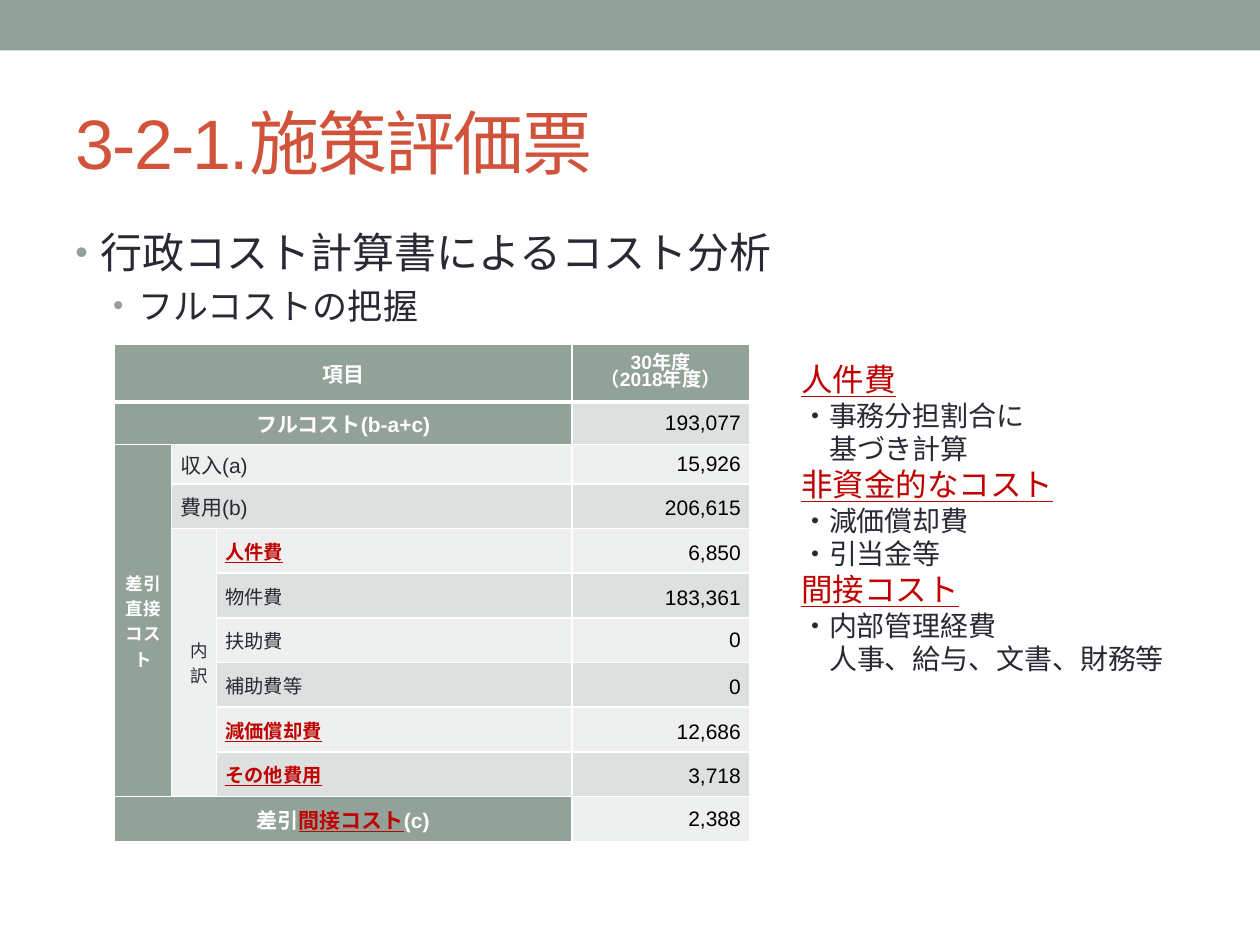
import pptx
import pptx.dml.color
import pptx.enum.shapes
import pptx.enum.text
import pptx.oxml.ns
import pptx.util
from dataclasses import dataclass
from lxml import etree

ALIGN = pptx.enum.text.PP_ALIGN
MIDDLE = pptx.enum.text.MSO_ANCHOR.MIDDLE
qn = pptx.oxml.ns.qn


@dataclass(frozen=True)
class Theme:
    sage: str = "93A299"
    band_dark: str = "DCE0DE"
    band_light: str = "EEF0EF"
    rust: str = "D2533C"
    ink: str = "292934"
    red: str = "C00000"
    black: str = "000000"
    white: str = "FFFFFF"
    latin: str = "Arial"
    cjk: str = "Noto Sans CJK JP"
    title: int = 40
    level1: int = 24
    level2: int = 20
    note_head: int = 18
    note: int = 16
    cell: int = 12
    item: int = 11
    vertical: int = 10


T = Theme()
W, H = pptx.util.Inches(10), pptx.util.Inches(7.5)


def box(left, top, width, height):
    """Turn percentages of the slide into a position and a size."""
    return [int(v * side / 100) for v, side in
            ((left, W), (top, H), (width, W), (height, H))]


def rgb(color):
    return pptx.dml.color.RGBColor.from_string(color)


def sub(parent, tag, **attrs):
    return etree.SubElement(parent, qn(tag), **attrs)


def add_run(p, text, size, color, bold=False, underline=False, font=T.latin):
    r = p.add_run()
    r.text = text
    r.font.size = pptx.util.Pt(size)
    r.font.bold = bold
    r.font.underline = underline
    r.font.color.rgb = rgb(color)
    r.font.name = font
    sub(r._r.get_or_add_rPr(), "a:ea", typeface=T.cjk)
    return r


def next_paragraph(tf):
    """Use the first paragraph while it is empty, then add new ones."""
    first = tf.paragraphs[0]
    return tf.add_paragraph() if first.runs else first


def indent(p, left, hanging=0):
    pPr = p._p.get_or_add_pPr()
    pPr.set("marL", str(pptx.util.Inches(left)))
    pPr.set("indent", str(-pptx.util.Inches(hanging)))
    return pPr


def add_text_box(s, *place):
    tf = s.shapes.add_textbox(*box(*place)).text_frame
    tf.word_wrap = True
    return tf


def add_bullet(tf, text, size, left):
    p = next_paragraph(tf)
    p.space_before = pptx.util.Pt(size * 0.2)
    pPr = indent(p, left, 0.2)
    sub(sub(pPr, "a:buClr"), "a:srgbClr", val=T.sage)
    sub(pPr, "a:buSzPct", val="85000")
    sub(pPr, "a:buFont", typeface=T.latin)
    sub(pPr, "a:buChar", char="•")
    add_run(p, text, size, T.ink)


def style_cell(cell, fill, **wide):
    """White borders (1 pt unless named in wide), margins and fill."""
    tcPr = cell._tc.get_or_add_tcPr()
    for side in "LRTB":
        ln = sub(tcPr, "a:ln" + side, w=str(pptx.util.Pt(wide.get(side, 1))))
        sub(sub(ln, "a:solidFill"), "a:srgbClr", val=T.white)
    cell.fill.solid()
    cell.fill.fore_color.rgb = rgb(fill)
    cell.margin_left = cell.margin_right = pptx.util.Inches(0.07)
    cell.margin_top = cell.margin_bottom = 0
    cell.vertical_anchor = MIDDLE


def write_cell(cell, align, *args, spacing=None, **style):
    p = next_paragraph(cell.text_frame)
    p.alignment = align
    if spacing:
        p.line_spacing = pptx.util.Pt(spacing)
    add_run(p, *args, **style)
    return p


def write_vertical(cell, *args, **style):
    cell._tc.get_or_add_tcPr().set("vert", "eaVert")
    return write_cell(cell, ALIGN.CENTER, *args, **style)


def add_cost_table(s):
    items = [("人件費", "6,850", True), ("物件費", "183,361", False),
             ("扶助費", "0", False), ("補助費等", "0", False),
             ("減価償却費", "12,686", True), ("その他費用", "3,718", True)]
    amounts = ["193,077", "15,926", "206,615", *[i[1] for i in items], "2,388"]
    last = len(amounts)
    place = box(9.1, 36.4, 50.4, 52.67)
    table = s.shapes.add_table(last + 1, 4, *place).table

    # Grid
    for col, width in zip(table.columns, (0.45, 0.36, 2.82, 1.41)):
        col.width = pptx.util.Inches(width)
    top_rows = [pptx.util.Inches(h) for h in (0.46, 0.34, 0.31)]
    rest = (place[3] - sum(top_rows)) // (last - 2)
    for i, row in enumerate(table.rows):
        row.height = top_rows[i] if i < 3 else rest

    # Fills and borders
    for i in range(last + 1):
        band = T.band_dark if i % 2 else T.band_light
        for j in range(4):
            head = i == 0 or j == 0 or (i in (1, last) and j < 3)
            fill = T.sage if head else T.band_light if i > 3 and j == 1 else band
            wide = {0: {"B": 3}, 1: {"T": 3}}.get(i, {})
            style_cell(table.cell(i, j), fill, **wide)

    # Merged areas: (top, left, bottom, right)
    for r1, c1, r2, c2 in ((0, 0, 0, 2), (1, 0, 1, 2), (2, 0, last - 1, 0),
                           (2, 1, 2, 2), (3, 1, 3, 2), (4, 1, last - 1, 1),
                           (last, 0, last, 2)):
        table.cell(r1, c1).merge(table.cell(r2, c2))

    # Headings
    heads = [(0, 0, "項目"), (1, 0, "フルコスト(b-a+c)"), (last, 0, "差引")]
    for i, j, text in heads:
        p = write_cell(table.cell(i, j), ALIGN.CENTER, text, T.cell, T.white,
                       bold=True)
    add_run(p, "間接コスト", T.cell, T.red, bold=True, underline=True)
    add_run(p, "(c)", T.cell, T.white, bold=True)
    for text, spacing in (("30年度", 12), ("（2018年度）", 10)):
        write_cell(table.cell(0, 3), ALIGN.CENTER, text, T.item, T.white,
                   spacing=spacing, bold=True)
    write_vertical(table.cell(2, 0), "差引直接コスト", T.vertical, T.white,
                   bold=True)
    indent(write_vertical(table.cell(4, 1), "内訳", T.vertical, T.ink), 0.08)

    # Items and amounts
    for i, text in enumerate(("収入(a)", "費用(b)"), 2):
        write_cell(table.cell(i, 1), ALIGN.JUSTIFY, text, T.cell, T.ink)
    for i, (text, _, key) in enumerate(items, 4):
        write_cell(table.cell(i, 2), ALIGN.JUSTIFY, text, T.item,
                   T.red if key else T.ink, bold=key, underline=key)
    for i, text in enumerate(amounts, 1):
        write_cell(table.cell(i, 3), ALIGN.RIGHT, text, T.cell, T.black,
                   spacing=16 if 3 <= i < last and i != 6 else None)


def add_notes_column(s):
    groups = {"人件費": ["・事務分担割合に", "基づき計算"],
              "非資金的なコスト": ["・減価償却費", "・引当金等"],
              "間接コスト": ["・内部管理経費", "人事、給与、文書、財務等"]}
    tf = add_text_box(s, 62.6, 37.47, 33.1, 35.07)
    for head, lines in groups.items():
        add_run(next_paragraph(tf), head, T.note_head, T.red, underline=True,
                font=T.cjk)
        for line in lines:
            p = next_paragraph(tf)
            if not line.startswith("・"):
                indent(p, T.note / 72)
            add_run(p, line, T.note, T.ink, font=T.cjk)


def main():
    prs = pptx.Presentation()
    prs.slide_width, prs.slide_height = W, H
    s = prs.slides.add_slide(prs.slide_layouts[6])

    # Top band
    band = s.shapes.add_shape(pptx.enum.shapes.MSO_SHAPE.RECTANGLE,
                              *box(0, 0, 100, 5.33))
    band.shadow.inherit = False
    band.fill.solid()
    band.fill.fore_color.rgb = rgb(T.sage)
    band.line.fill.background()

    # Title
    tf = add_text_box(s, 5, 7.73, 90, 14.4)
    tf.vertical_anchor = MIDDLE
    r = add_run(tf.paragraphs[0], "3-2-1.施策評価票", T.title, T.rust)
    r._r.get_or_add_rPr().set("spc", "-100")

    # Bullets
    tf = add_text_box(s, 5, 23.33, 90, 71.07)
    add_bullet(tf, "行政コスト計算書によるコスト分析", T.level1, 0.2)
    add_bullet(tf, "フルコストの把握", T.level2, 0.5)

    add_cost_table(s)
    add_notes_column(s)
    prs.save("out.pptx")


if __name__ == "__main__":
    main()
